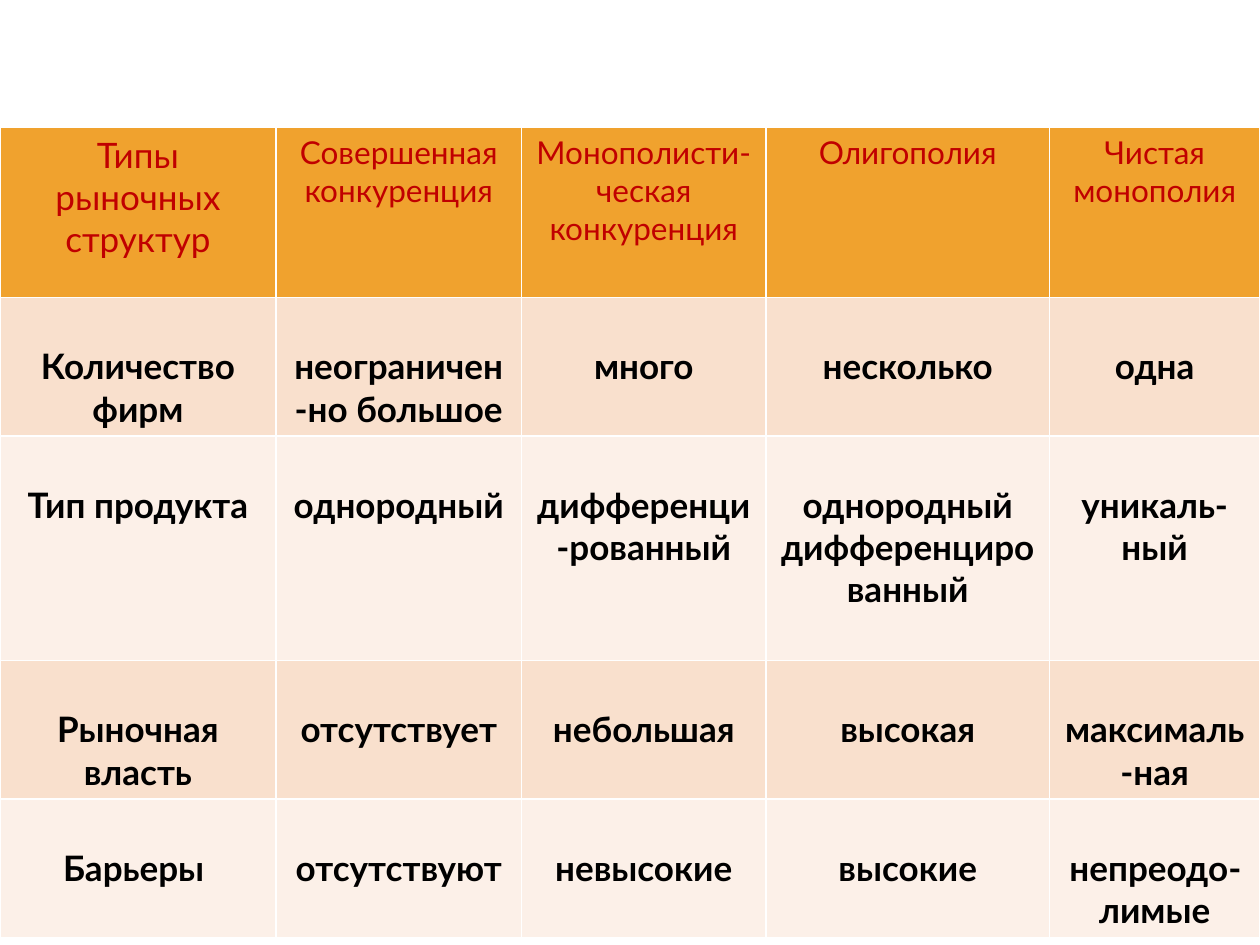
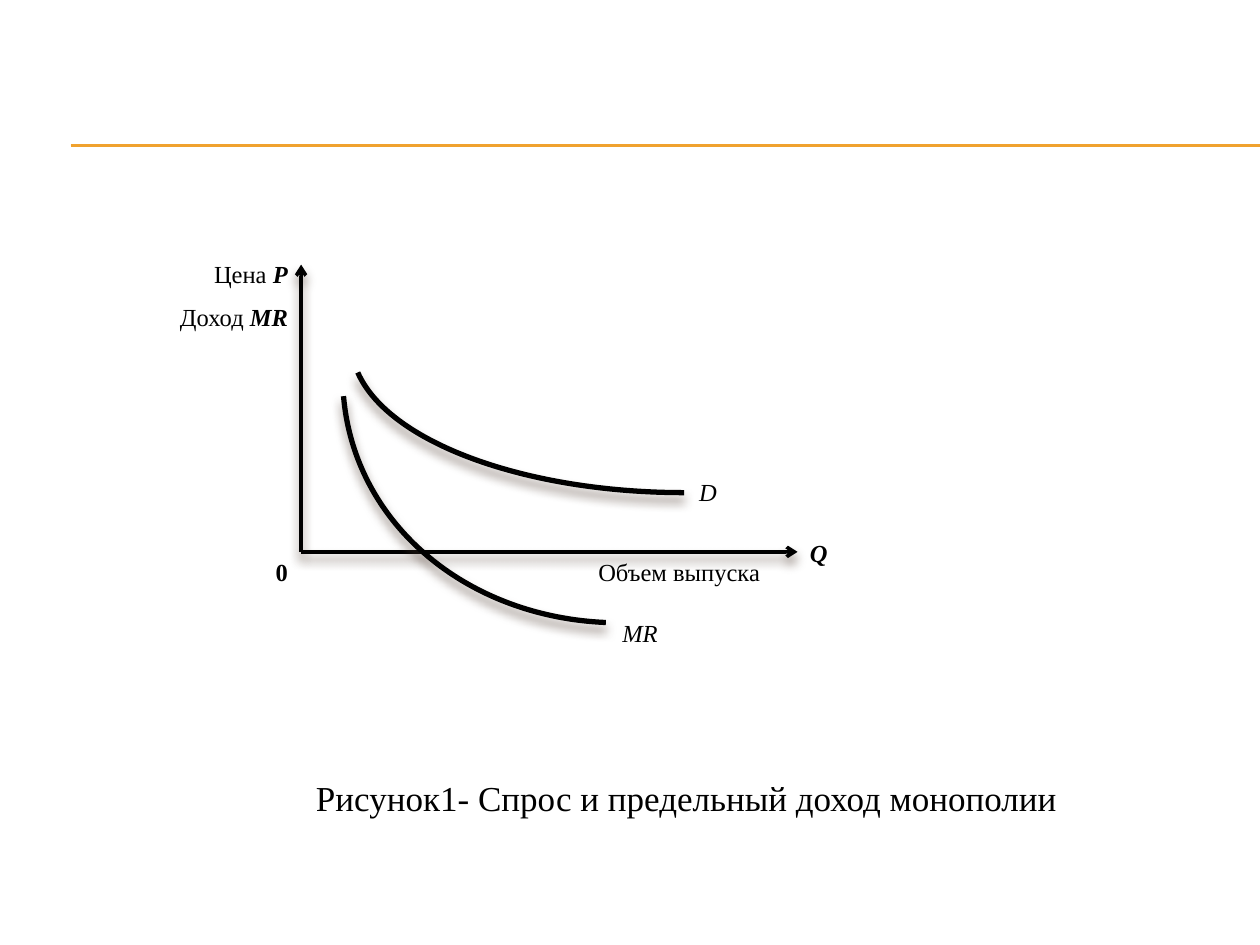
import pptx
import pptx.dml.color
import pptx.enum.shapes
import pptx.enum.text
import pptx.oxml
import pptx.oxml.ns
import pptx.util

Inches = pptx.util.Inches
Color = pptx.dml.color.RGBColor

GOLD = Color(0xF0, 0xA2, 0x2E)
RED = Color(0xC0, 0x00, 0x00)
BLACK = Color(0x00, 0x00, 0x00)
PEACH = Color(0xF9, 0xE0, 0xCD)
CREAM = Color(0xFC, 0xF0, 0xE8)
WHITE = Color(0xFF, 0xFF, 0xFF)
SHADE = Color(0x4E, 0x3B, 0x30)

HEAD = {"name": "Lato", "bold": False, "color": RED}
BODY = {"name": "Lato", "bold": True, "color": BLACK, "size": 20}
LABEL = {"name": "Times New Roman", "color": BLACK, "size": 14}
TITLE = {**LABEL, "size": 20}
BOLD = {"bold": True}
SLANT = {"italic": True}
BOTH = {**BOLD, **SLANT}

COLS = [2.19, 1.95, 1.94, 2.25, 1.67]
ROWS = [1.35, 1.1, 1.78, 1.1, 1.1]
CELLS = [
    ["Типы рыночных структур", "Совершенная конкуренция",
     "Монополисти-ческая конкуренция", "Олигополия", "Чистая монополия"],
    ["Количество фирм", "неограничен-но большое", "много", "несколько",
     "одна"],
    ["Тип продукта", "однородный", "дифференци-рованный",
     "однородный дифференцированный", "уникаль-ный"],
    ["Рыночная власть", "отсутствует", "небольшая", "высокая",
     "максималь-ная"],
    ["Барьеры ", "отсутствуют", "невысокие", "высокие", "непреодо-лимые"],
]


def style(font, form):
    for key, value in form.items():
        if key == "color":
            font.color.rgb = value
        else:
            setattr(font, key, pptx.util.Pt(value) if key == "size" else value)


def make_xml(text):
    space = pptx.oxml.ns.nsdecls("a")
    return pptx.oxml.parse_xml(text.replace(">", f" {space}>", 1))


def add_effect(shape, shadow):
    """Replace the theme effect by a soft shadow below, or by none."""
    props = shape._element.spPr
    for old in props.findall(pptx.oxml.ns.qn("a:effectLst")):
        props.remove(old)
    inner = ""
    if shadow:
        blur, dist = pptx.util.Pt(6), pptx.util.Pt(4)
        inner = (f'<a:outerShdw blurRad="{blur}" dist="{dist}" dir="5400000" '
                 f'rotWithShape="0"><a:srgbClr val="{SHADE}">'
                 '<a:alpha val="60000"/></a:srgbClr></a:outerShdw>')
    props.append(make_xml(f"<a:effectLst>{inner}</a:effectLst>"))


def set_line(shape, color, width):
    shape.line.color.rgb = color
    shape.line.width = pptx.util.Pt(width)


def add_line(slide, start, end, color, width, arrow=False):
    kind = pptx.enum.shapes.MSO_CONNECTOR.STRAIGHT
    line = slide.shapes.add_connector(kind, *map(Inches, start + end))
    set_line(line, color, width)
    if arrow:
        line.line._get_or_add_ln().append(
            make_xml('<a:tailEnd type="arrow"></a:tailEnd>'))
    add_effect(line, arrow)


def add_arc(slide, box, turn, sweep):
    arc = slide.shapes.add_shape(
        pptx.enum.shapes.MSO_SHAPE.ARC, *map(Inches, box))
    arc.rotation = turn
    for spot, value in enumerate(sweep):
        arc.adjustments[spot] = value
    arc.fill.background()
    set_line(arc, BLACK, 3)
    add_effect(arc, True)


def add_text(slide, box, runs, base=LABEL):
    frame = slide.shapes.add_textbox(*map(Inches, box)).text_frame
    frame.word_wrap = False
    frame.auto_size = pptx.enum.text.MSO_AUTO_SIZE.SHAPE_TO_FIT_TEXT
    for text, form in runs:
        run = frame.paragraphs[0].add_run()
        run.text = text
        style(run.font, {**base, **form})


def set_edges(cell):
    props = cell._tc.get_or_add_tcPr()
    for spot, side in enumerate("LRTB"):
        props.insert(spot, make_xml(
            f'<a:ln{side} w="{pptx.util.Pt(1)}"><a:solidFill>'
            f'<a:srgbClr val="{WHITE}"/></a:solidFill></a:ln{side}>'))


def fill_cell(cell, text, row, col):
    cell.fill.solid()
    if row == 0:
        cell.fill.fore_color.rgb = GOLD
        form = {**HEAD, "size": 18 if col else 20}
    else:
        cell.fill.fore_color.rgb = PEACH if row % 2 else CREAM
        cell.margin_top = Inches(0.38)
        form = BODY
    set_edges(cell)
    para = cell.text_frame.paragraphs[0]
    para.alignment = pptx.enum.text.PP_ALIGN.CENTER
    run = para.add_run()
    run.text = text
    style(run.font, form)


def add_grid(slide, left, top):
    """Table of market structures."""
    table = slide.shapes.add_table(
        len(ROWS), len(COLS), Inches(left), Inches(top),
        Inches(sum(COLS)), Inches(sum(ROWS))).table
    for part, size in zip(table.columns, COLS):
        part.width = Inches(size)
    for part, size in zip(table.rows, ROWS):
        part.height = Inches(size)
    for row, texts in enumerate(CELLS):
        for col, text in enumerate(texts):
            fill_cell(table.cell(row, col), text, row, col)


def add_rule(slide, left, top, right):
    """Double gold rule under the title area."""
    for y in (top, top + 0.01):
        add_line(slide, (left, y), (right, y), GOLD, 0.75)


def add_page(deck):
    """Blank slide with the shared rule."""
    slide = deck.slides.add_slide(deck.slide_layouts[6])
    add_rule(slide, 0.56, 1.15, 10)
    return slide


def add_graph(slide, x, y):
    """Demand and marginal revenue curves around the origin at x, y."""
    # Axes
    add_line(slide, (x, y), (x, y - 2.28), BLACK, 2, arrow=True)
    add_line(slide, (x, y), (x + 3.94, y), BLACK, 2, arrow=True)
    # Curves: MR, then D
    add_arc(slide, (x + 0.31, y - 3.61, 4.77, 4.15), 164.8, (175.64, 4.78))
    add_arc(slide, (x + 0.4, y - 2.83, 5.28, 2.36), 180, (162, 213.01))
    # Labels: offset from the origin, width, runs
    labels = [
        (-0.79, -2.37, 0.79, [("Цена ", {}), ("P", BOTH)]),
        (-1.06, -2.03, 1.07, [("Доход ", {}), ("MR", BOTH)]),
        (-0.3, -0.01, 0.3, [("0", BOLD)]),
        (2.26, -0.01, 1.55, [("Объем выпуска", {})]),
        (3.94, -0.16, 0.34, [("Q", BOTH)]),
        (3.06, -0.64, 0.34, [("D", SLANT)]),
        (2.45, 0.48, 0.48, [("MR", SLANT)]),
    ]
    for right, down, width, runs in labels:
        add_text(slide, (x + right, y + down, width, 0.34), runs)


def main():
    deck = pptx.Presentation()
    deck.slide_width, deck.slide_height = Inches(10), Inches(7.5)

    # Market structures
    add_grid(add_page(deck), 0, 1.01)

    # Demand and revenue of a monopoly
    slide = add_page(deck)
    add_graph(slide, 2.39, 4.38)
    add_text(slide, (2.41, 6.11, 6.14, 0.44),
             [("Рисунок1- Спрос и предельный доход монополии", {})], TITLE)
    deck.save("out.pptx")


if __name__ == "__main__":
    main()
